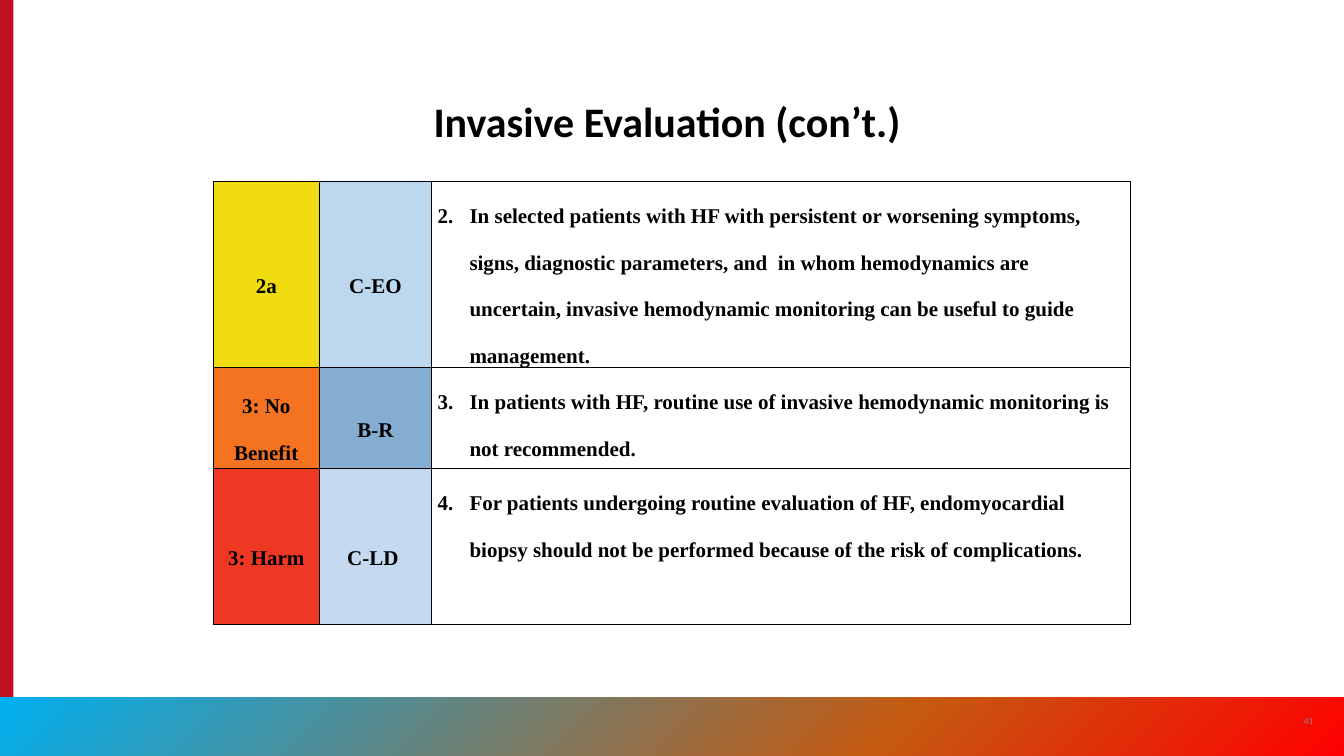
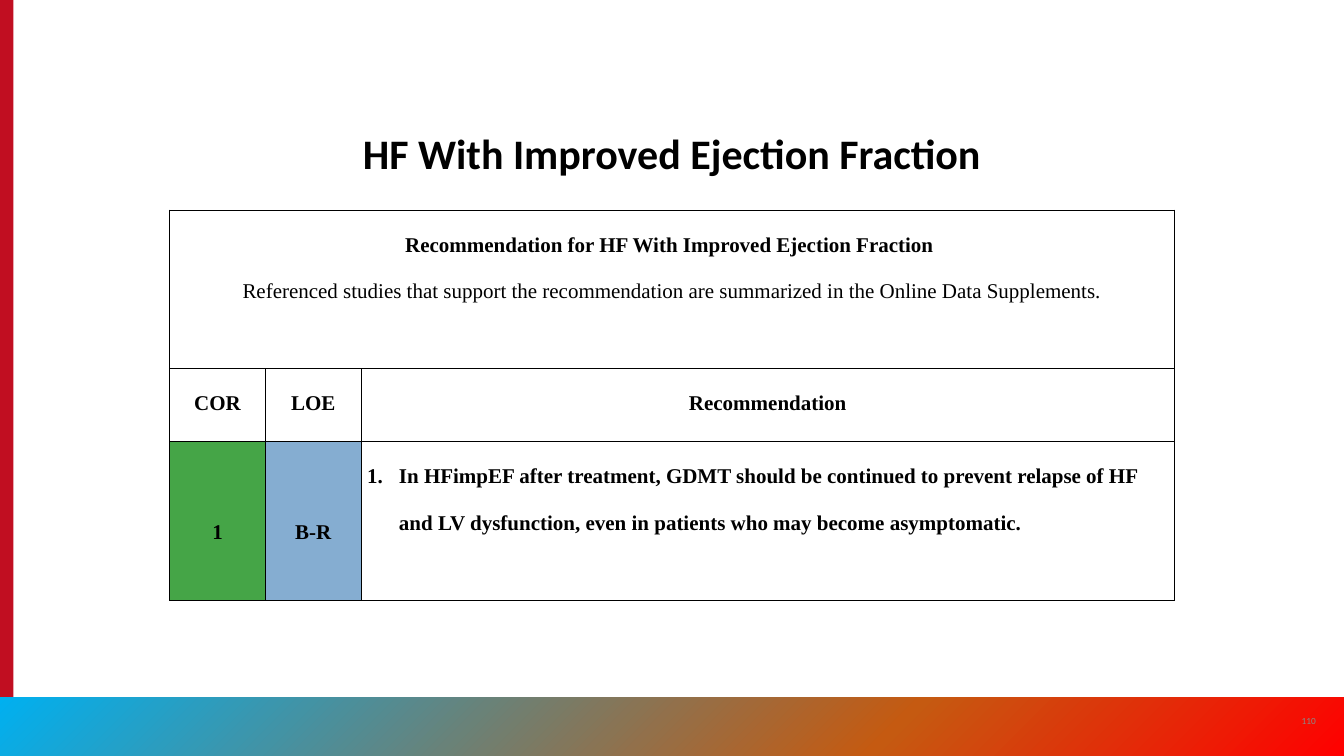
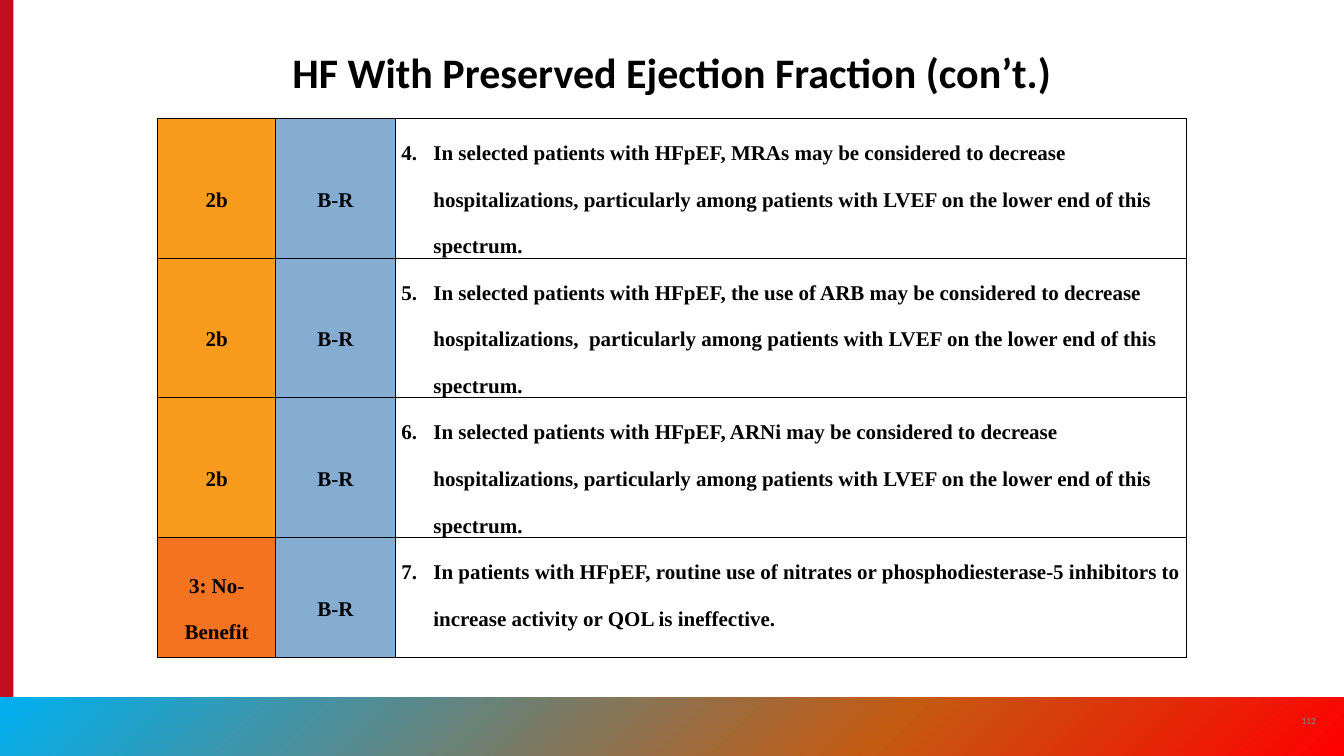
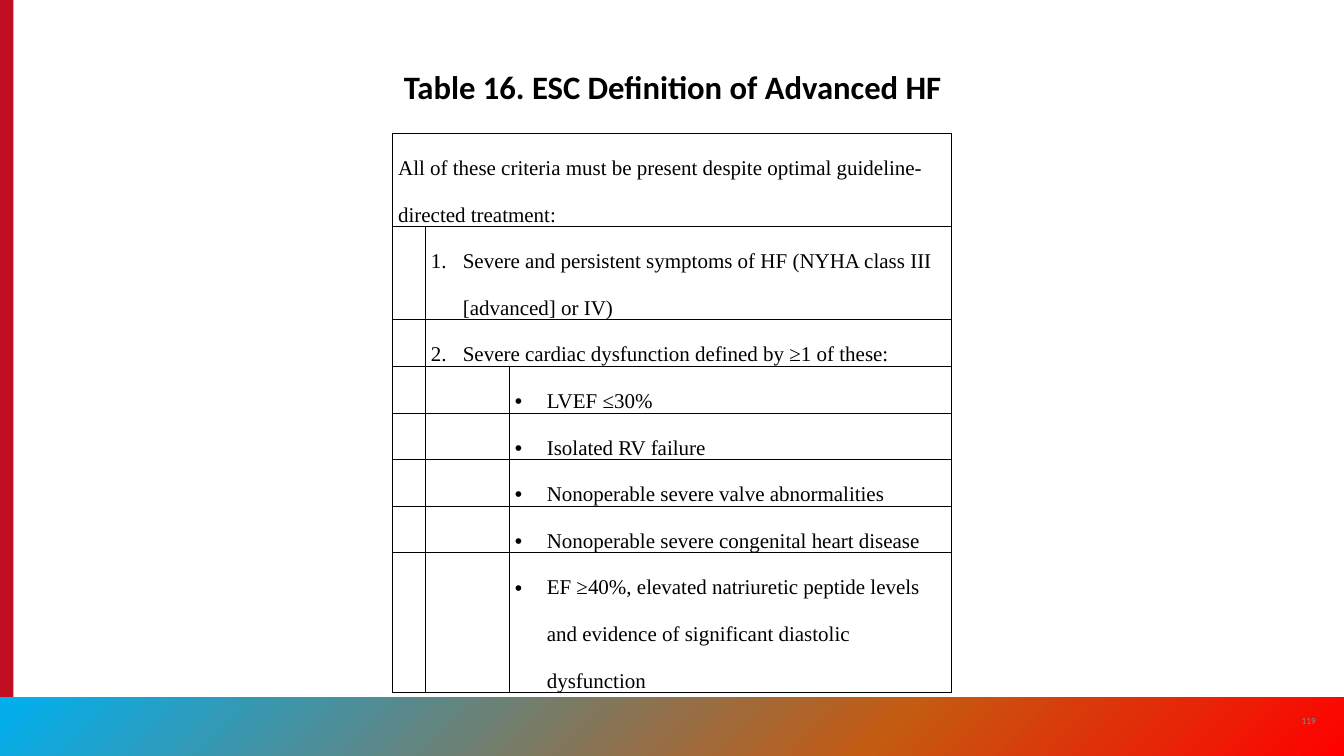
"""Build four heart-failure guideline slides that share one band, title and table style."""

from dataclasses import dataclass

from lxml.etree import SubElement
from pptx import Presentation
from pptx.dml.color import RGBColor
from pptx.enum.dml import MSO_LINE
from pptx.enum.shapes import MSO_SHAPE
from pptx.enum.text import MSO_ANCHOR, MSO_AUTO_SIZE, PP_ALIGN
from pptx.oxml.ns import qn
from pptx.util import Inches, Pt


@dataclass(frozen=True)
class Theme:
    ink: str = "000000"
    side_bar: str = "C10E21"
    muted: str = "8A8B8A"
    band: tuple = ((0, "00B0F0"), (66, "C55A11"), (100, "FF0000"))
    class_1: str = "45A547"
    class_2a: str = "F0DA10"
    class_2b: str = "F99B1C"
    no_benefit: str = "F37321"
    harm: str = "EF3824"
    level_br: str = "85ADD1"
    level_ld: str = "C4D9F0"
    level_eo: str = "BDD7EE"
    title_font: str = "Calibri"
    table_font: str = "Times New Roman"
    bullet_font: str = "Arial"
    title_size: int = 36
    small_title_size: int = 28
    table_size: int = 18
    number_size: int = 8
    cell_margin: float = 0.07
    hanging: float = 0.38
    line_pitch: float = 39.9
    line_height: float = 0.55


THEME = Theme()


@dataclass(frozen=True)
class Line:
    text: str
    bold: bool = True
    centered: bool = False
    marker: int | str | None = None


@dataclass(frozen=True)
class Cell:
    lines: tuple[Line, ...] = ()
    fill: str | None = None
    span: int = 1
    middle: bool = False


@dataclass(frozen=True)
class Page:
    number: int
    title: str
    title_box: tuple[float, float, float, float]
    table_at: tuple[float, float]
    columns: tuple[float, ...]
    row_heights: tuple[float, ...]
    rows: tuple[tuple[Cell, ...], ...]
    title_size: int = THEME.title_size


def grade(text: str, fill: str) -> Cell:
    """Return a coloured class or evidence cell."""
    return Cell((Line(text, centered=True),), fill, middle=True)


def heading(text: str) -> Cell:
    """Return a column heading."""
    return Cell((Line(text, centered=True),))


def advice(number: int, text: str) -> Cell:
    """Return a numbered recommendation."""
    return Cell((Line(text, marker=number),))


def criterion(text: str, marker: int | str | None = None, span: int = 1) -> Cell:
    """Return a cell of the definition table."""
    return Cell((Line(text, bold=False, marker=marker),), span=span)


def style_runs(paragraph, font_name: str, size: int, color: str, bold: bool = False) -> None:
    """Format every run of a paragraph."""
    for run in paragraph.runs:
        run.font.name = font_name
        run.font.size = Pt(size)
        run.font.bold = bold
        run.font.color.rgb = RGBColor.from_string(color)


def add_solid(parent, color: str) -> None:
    """Append a solid fill to an XML element."""
    solid = SubElement(parent, qn("a:solidFill"))
    SubElement(solid, qn("a:srgbClr"), val=color)


def fill_band(band) -> None:
    """Give the bottom band its diagonal gradient."""
    band.fill.background()
    properties = band.element.spPr
    gradient = SubElement(properties, qn("a:gradFill"), rotWithShape="1")
    stops = SubElement(gradient, qn("a:gsLst"))
    for percent, color in THEME.band:
        stop = SubElement(stops, qn("a:gs"), pos=str(percent * 1000))
        SubElement(stop, qn("a:srgbClr"), val=color)
    SubElement(gradient, qn("a:lin"), ang=str(45 * 60000), scaled="0")
    properties.replace(properties.find(qn("a:noFill")), gradient)


def furnish_layout(layout, slide) -> None:
    """Draw the shared side bar, ring and band and move them to the layout."""
    bar, ring, band = (
        slide.shapes.add_shape(kind, *map(Inches, box))
        for kind, box in (
            (MSO_SHAPE.RECTANGLE, (0, 0, 0.16, 9)),
            (MSO_SHAPE.OVAL, (15.42, 8.42, 0.33, 0.33)),
            (MSO_SHAPE.RECTANGLE, (0, 8.3, 16, 0.7)),
        )
    )
    bar.fill.solid()
    bar.fill.fore_color.rgb = RGBColor.from_string(THEME.side_bar)
    bar.line.fill.background()
    ring.fill.background()
    ring.line.color.rgb = RGBColor.from_string(THEME.muted)
    ring.line.width = Pt(2.5)
    ring.line.dash_style = MSO_LINE.ROUND_DOT
    band.line.fill.background()
    fill_band(band)
    for part in (bar, ring, band):
        part.shadow.inherit = False
        layout.shapes.element.append(part.element)


def add_title(slide, page: Page) -> None:
    """Place and format the title placeholder."""
    title = slide.shapes.title
    title.left, title.top, title.width, title.height = map(Inches, page.title_box)
    frame = title.text_frame
    frame.text = page.title
    frame.word_wrap = True
    frame.auto_size = MSO_AUTO_SIZE.NONE
    frame.vertical_anchor = MSO_ANCHOR.TOP
    paragraph = frame.paragraphs[0]
    paragraph.alignment = PP_ALIGN.CENTER
    style_runs(paragraph, THEME.title_font, page.title_size, THEME.ink, bold=True)


def add_page_number(slide, number: int) -> None:
    """Write the page number over the band."""
    frame = slide.shapes.add_textbox(*map(Inches, (15.34, 8.34, 0.48, 0.48))).text_frame
    frame.text = str(number)
    frame.word_wrap = True
    frame.vertical_anchor = MSO_ANCHOR.MIDDLE
    paragraph = frame.paragraphs[0]
    paragraph.alignment = PP_ALIGN.CENTER
    style_runs(paragraph, THEME.title_font, THEME.number_size, THEME.muted)


def add_marker(paragraph, marker: int | str) -> None:
    """Give a paragraph a hanging number or bullet."""
    properties = paragraph._p.get_or_add_pPr()
    properties.set("marL", str(Inches(THEME.hanging)))
    properties.set("indent", str(-Inches(THEME.hanging)))
    if isinstance(marker, int):
        SubElement(properties, qn("a:buAutoNum"), type="arabicPeriod", startAt=str(marker))
    else:
        SubElement(properties, qn("a:buFont"), typeface=THEME.bullet_font)
        SubElement(properties, qn("a:buChar"), char=marker)


def add_borders(table_cell) -> None:
    """Draw a thin line on all four sides of a cell."""
    properties = table_cell._tc.get_or_add_tcPr()
    for position, side in enumerate(("a:lnL", "a:lnR", "a:lnT", "a:lnB")):
        border = SubElement(properties, qn(side), w=str(Pt(1)))
        add_solid(border, THEME.ink)
        properties.insert(position, border)


def fill_cell(table_cell, cell: Cell) -> None:
    """Write and format the content of one table cell."""
    table_cell.margin_left = table_cell.margin_right = Inches(THEME.cell_margin)
    table_cell.margin_top = table_cell.margin_bottom = 0
    table_cell.vertical_anchor = MSO_ANCHOR.MIDDLE if cell.middle else MSO_ANCHOR.TOP
    if cell.fill:
        table_cell.fill.solid()
        table_cell.fill.fore_color.rgb = RGBColor.from_string(cell.fill)
    frame = table_cell.text_frame
    frame.text = "\n".join(line.text for line in cell.lines)
    for paragraph, line in zip(frame.paragraphs, cell.lines):
        if line.marker is not None:
            add_marker(paragraph, line.marker)
        paragraph.alignment = PP_ALIGN.CENTER if line.centered else PP_ALIGN.LEFT
        paragraph.line_spacing = Pt(THEME.line_pitch)
        style_runs(paragraph, THEME.table_font, THEME.table_size, THEME.ink, line.bold)


def add_grid(slide, page: Page) -> None:
    """Add the table of a page."""
    size = sum(page.columns), sum(page.row_heights)
    table = slide.shapes.add_table(
        len(page.rows), len(page.columns), *map(Inches, page.table_at + size)
    ).table
    table.first_row = table.horz_banding = False
    for column, width in zip(table.columns, page.columns):
        column.width = Inches(width)
    for row, height in zip(table.rows, page.row_heights):
        row.height = Inches(height)
    for table_cell in table.iter_cells():
        table_cell.fill.background()
        add_borders(table_cell)
    for row_index, cells in enumerate(page.rows):
        column_index = 0
        for cell in cells:
            table_cell = table.cell(row_index, column_index)
            column_index += cell.span
            if cell.span > 1:
                table_cell.merge(table.cell(row_index, column_index - 1))
            fill_cell(table_cell, cell)


INVASIVE_EVALUATION = Page(
    41,
    "Invasive Evaluation (con’t.) ",
    (4.37, 1.09, 7.26, 0.67),
    (2.54, 2.16),
    (1.26, 1.34, 8.32),
    (2.22, 1.2, 1.86),
    (
        (
            grade("2a", THEME.class_2a),
            grade("C-EO", THEME.level_eo),
            advice(2, "In selected patients with HF with persistent or worsening symptoms, signs, "
                   "diagnostic parameters, and  in whom hemodynamics are uncertain, invasive "
                   "hemodynamic monitoring can be useful to guide management."),
        ),
        (
            grade("3: No Benefit", THEME.no_benefit),
            grade("B-R", THEME.level_br),
            advice(3, "In patients with HF, routine use of invasive hemodynamic monitoring "
                   "is not recommended."),
        ),
        (
            grade("3: Harm", THEME.harm),
            grade("C-LD ", THEME.level_ld),
            advice(4, "For patients undergoing routine evaluation of HF, endomyocardial biopsy "
                   "should not be performed because of the risk of complications."),
        ),
    ),
)

IMPROVED_FRACTION = Page(
    110,
    "HF With Improved Ejection Fraction",
    (2.93, 1.47, 10.14, 0.78),
    (2.02, 2.5),
    (1.14, 1.14, 9.68),
    (1.89, 0.87, 1.89),
    (
        (
            Cell(
                (
                    Line("Recommendation for HF With Improved Ejection Fraction ", centered=True),
                    Line("Referenced studies that support the recommendation are summarized in "
                         "the Online Data Supplements.", bold=False, centered=True),
                ),
                span=3,
            ),
        ),
        (heading("COR"), heading("LOE"), heading("Recommendation")),
        (
            grade("1", THEME.class_1),
            grade("B-R", THEME.level_br),
            advice(1, "In HFimpEF after treatment, GDMT should be continued to prevent relapse of "
                   "HF and LV dysfunction, even in patients who may become asymptomatic."),
        ),
    ),
)

PRESERVED_ADVICE = (
    "In selected patients with HFpEF, MRAs may be considered to decrease hospitalizations, "
    "particularly among patients with LVEF on the lower end of this spectrum.",
    "In selected patients with HFpEF, the use of ARB may be considered to decrease "
    "hospitalizations,  particularly among patients with LVEF on the lower end of this spectrum.",
    "In selected patients with HFpEF, ARNi may be considered to decrease hospitalizations, "
    "particularly among patients with LVEF on the lower end of this spectrum.",
)

PRESERVED_FRACTION = Page(
    112,
    "HF With Preserved Ejection Fraction (con’t.)",
    (2.72, 0.5, 10.56, 0.75),
    (1.88, 1.41),
    (1.4, 1.43, 9.42),
    (1.66, 1.66, 1.66, 1.43),
    (
        *(
            (grade("2b", THEME.class_2b), grade("B-R", THEME.level_br), advice(number, text))
            for number, text in enumerate(PRESERVED_ADVICE, start=4)
        ),
        (
            grade("3: No-Benefit", THEME.no_benefit),
            grade("B-R", THEME.level_br),
            advice(7, "In patients with HFpEF, routine use of nitrates or phosphodiesterase-5 "
                   "inhibitors to increase activity or QOL is ineffective."),
        ),
    ),
)

CARDIAC_DYSFUNCTION = (
    "LVEF ≤30%",
    "Isolated RV failure",
    "Nonoperable severe valve abnormalities",
    "Nonoperable severe congenital heart disease",
    "EF ≥40%, elevated natriuretic peptide levels and evidence of significant diastolic "
    "dysfunction",
)

ADVANCED_DEFINITION = Page(
    119,
    "Table 16. ESC Definition of Advanced HF",
    (4.17, 0.75, 7.67, 0.5),
    (4.67, 1.59),
    (0.39, 1, 5.27),
    tuple(THEME.line_height * lines for lines in (2, 2, 1, 1, 1, 1, 1, 3)),
    (
        (
            criterion("All of these criteria must be present despite optimal "
                      "guideline-directed treatment:", span=3),
        ),
        (
            Cell(),
            criterion("Severe and persistent symptoms of HF (NYHA class III [advanced] or IV)",
                      1, span=2),
        ),
        (Cell(), criterion("Severe cardiac dysfunction defined by ≥1 of these:", 2, span=2)),
        *((Cell(), Cell(), criterion(text, "•")) for text in CARDIAC_DYSFUNCTION),
    ),
    THEME.small_title_size,
)

PAGES = (INVASIVE_EVALUATION, IMPROVED_FRACTION, PRESERVED_FRACTION, ADVANCED_DEFINITION)


def main() -> None:
    """Build and save the presentation."""
    deck = Presentation()
    deck.slide_width, deck.slide_height = Inches(16), Inches(9)
    layout = deck.slide_layouts.get_by_name("Title Only")
    for index, page in enumerate(PAGES):
        slide = deck.slides.add_slide(layout)
        if index == 0:
            furnish_layout(layout, slide)
        add_title(slide, page)
        add_page_number(slide, page.number)
        add_grid(slide, page)
    deck.save("out.pptx")


if __name__ == "__main__":
    main()
